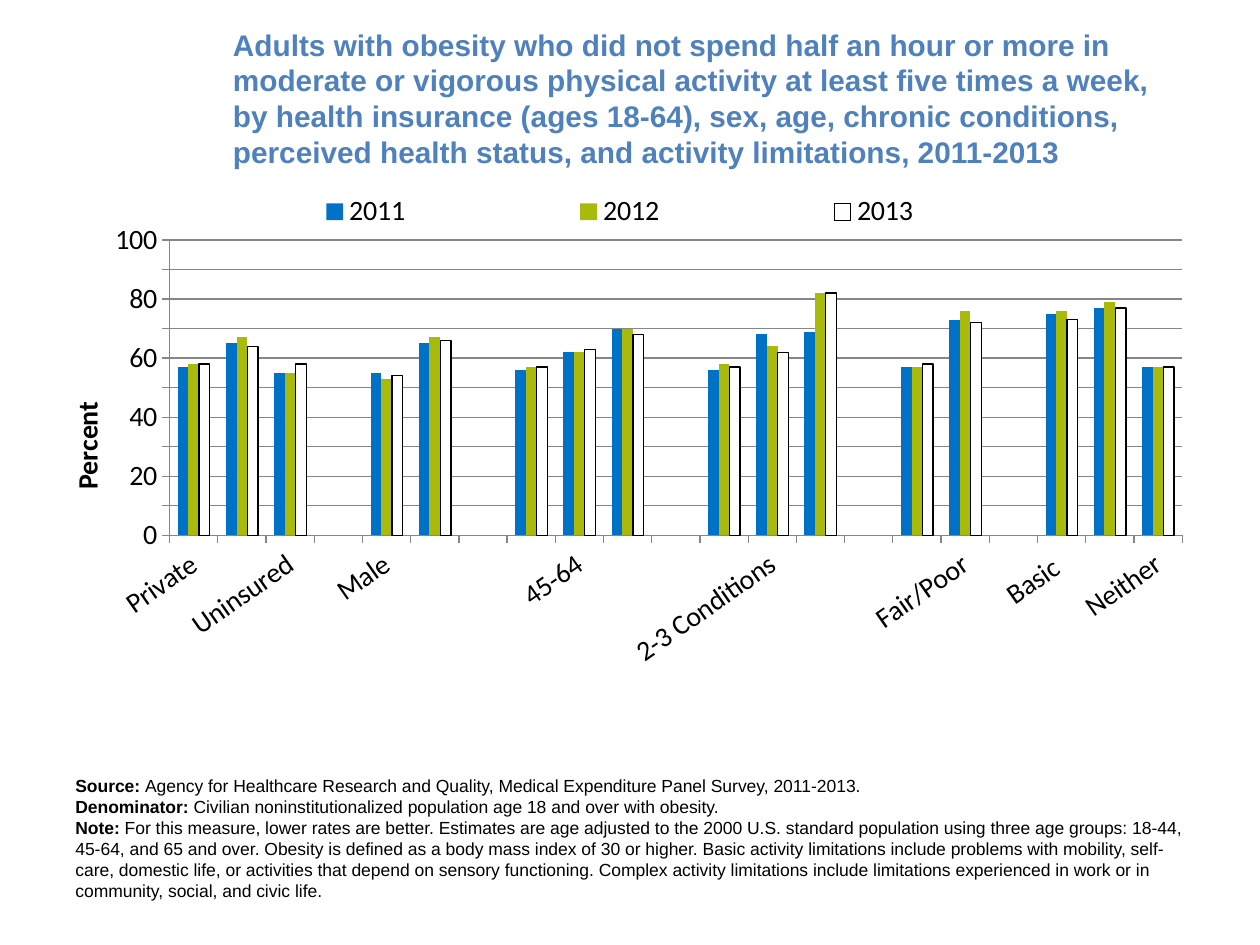
from typing import NamedTuple, Optional

from lxml import etree
from pptx import Presentation
from pptx import util as u
from pptx.chart.data import CategoryChartData
from pptx.dml.color import RGBColor
from pptx.enum import chart as charts, text
from pptx.oxml import parse_xml
from pptx.oxml.ns import nsdecls, qn

WIDTH, HEIGHT = 10, 7.5
COLORS = {"title": "4F81BD", "ink": "000000", "grid": "868686",
          "2011": "0072C6", "2012": "AABA0A", "2013": "FFFFFF"}


class Area(NamedTuple):
    """Left, top, width and height as shares of the slide or chart."""
    left: float
    top: float
    width: float
    height: float

    def on_slide(self) -> list:
        sides = (WIDTH, HEIGHT, WIDTH, HEIGHT)
        return [u.Inches(share * side) for share, side in zip(self, sides)]


class Words(NamedTuple):
    content: str
    bold: bool


class Group(NamedTuple):
    """Categories that stand together, with one row of values per year."""
    labels: list
    values: dict


TITLE_AREA = Area(0.175, 0.04, 0.775, 0.127)
CHART_AREA = Area(0.05, 0.2, 0.9, 0.613)
NOTES_AREA = Area(0.05, 0.813, 0.9, 0.148)
PLOT_AREA = Area(0.094, 0.088, 0.893, 0.51)
LEGEND_AREA = Area(0.086, 0.01, 0.81, 0.055)

TITLE = ("Adults with obesity who did not spend half an hour or more in moderate or "
         "vigorous physical activity at least five times a week, by health insurance "
         "(ages 18-64), sex, age, chronic conditions, perceived health status, and "
         "activity limitations, 2011-2013")
NOTES = {
    "Source: ": "Agency for Healthcare Research and Quality, Medical Expenditure Panel "
                "Survey, 2011-2013.",
    "Denominator: ": "Civilian noninstitutionalized population age 18 and over with obesity.",
    "Note: ": "For this measure, lower rates are better. Estimates are age adjusted to the "
              "2000 U.S. standard population using three age groups: 18-44, 45-64, and 65 "
              "and over. Obesity is defined as a body mass index of 30 or higher. Basic "
              "activity limitations include problems with mobility, self-care, domestic "
              "life, or activities that depend on sensory functioning. Complex activity "
              "limitations include limitations experienced in work or in community, social, "
              "and civic life.",
}
YEARS = ("2011", "2012", "2013")
GROUPS = [
    Group(["Private", "Public", "Uninsured"],
          {"2011": [57, 65, 55], "2012": [58, 67, 55], "2013": [58, 64, 58]}),
    Group(["Male", "Female"],
          {"2011": [55, 65], "2012": [53, 67], "2013": [54, 66]}),
    Group(["18-44", "45-64", "65+"],
          {"2011": [56, 62, 70], "2012": [57, 62, 70], "2013": [57, 63, 68]}),
    Group(["0-1 Conditions", "2-3 Conditions", "4+ Conditions"],
          {"2011": [56, 68, 69], "2012": [58, 64, 82], "2013": [57, 62, 82]}),
    Group(["Excellent/Very Good/Good", "Fair/Poor"],
          {"2011": [57, 73], "2012": [57, 76], "2013": [58, 72]}),
    Group(["Basic ", "Complex", "Neither"],
          {"2011": [75, 77, 57], "2012": [76, 79, 57], "2013": [73, 77, 57]}),
]


def color(name: str) -> RGBColor:
    return RGBColor.from_string(COLORS[name])


def style(font, size: float, name: str, ink: str, bold: Optional[bool] = None) -> None:
    font.size, font.name, font.bold = u.Pt(size), name, bold
    font.color.rgb = color(ink)


def add_text(page, area: Area, paragraphs: list, size: float, ink: str, anchor) -> None:
    frame = page.shapes.add_textbox(*area.on_slide()).text_frame
    frame.word_wrap = True
    frame.vertical_anchor = anchor
    for index, runs in enumerate(paragraphs):
        para = frame.add_paragraph() if index else frame.paragraphs[0]
        for words in runs:
            span = para.add_run()
            span.text = words.content
            style(span.font, size, "Arial", ink, words.bold)


def layout(area: Area, inner: bool = False) -> etree._Element:
    target = '<c:layoutTarget val="inner"/>' if inner else ""
    sizes = "".join(f'<c:{tag} val="{share}"/>' for tag, share in zip("xywh", area))
    return parse_xml(f'<c:layout {nsdecls("c")}><c:manualLayout>{target}'
                     '<c:xMode val="edge"/><c:yMode val="edge"/>'
                     f'{sizes}</c:manualLayout></c:layout>')


def joined(rows: list, gap) -> list:
    """Chain the groups with one empty slot between neighbours."""
    result = list(rows[0])
    for row in rows[1:]:
        result += [gap, *row]
    return result


def add_rates_chart(page) -> None:
    data = CategoryChartData(number_format="0")
    data.categories = joined([group.labels for group in GROUPS], "")
    for year in YEARS:
        data.add_series(year, joined([group.values[year] for group in GROUPS], None))
    chart = page.shapes.add_chart(charts.XL_CHART_TYPE.COLUMN_CLUSTERED,
                                  *CHART_AREA.on_slide(), data).chart
    style(chart.font, 10, "Arial", "ink")
    chart.has_title = False

    # Columns
    plot = chart.plots[0]
    plot.gap_width, plot.overlap, plot.vary_by_categories = 150, 0, False
    for series in plot.series:
        series.format.fill.solid()
        series.format.fill.fore_color.rgb = color(series.name)
        series.invert_if_negative = False
    outline = plot.series[-1].format.line
    outline.color.rgb, outline.width = color("ink"), u.Pt(0.75)

    # Axes
    for axis in (chart.category_axis, chart.value_axis):
        style(axis.tick_labels.font, 16, "Calibri", "ink")
        axis.major_tick_mark = charts.XL_TICK_MARK.OUTSIDE
        axis.format.line.color.rgb = color("grid")
    labels = chart.category_axis._element.find(qn("c:txPr")).find(qn("a:bodyPr"))
    labels.set("rot", str(-35 * 60000))
    scale = chart.value_axis
    scale.minimum_scale, scale.maximum_scale, scale.major_unit = 0, 100, 10
    scale.tick_labels.number_format = "0"
    scale.tick_labels.number_format_is_linked = False
    scale.has_major_gridlines = True
    scale.major_gridlines.format.line.color.rgb = color("grid")
    span = scale.axis_title.text_frame.paragraphs[0].add_run()
    span.text = "Percent"
    style(span.font, 16, "Calibri", "ink", True)

    # Legend and placement
    chart.has_legend = True
    legend = chart.legend
    legend.position = charts.XL_LEGEND_POSITION.TOP
    legend.include_in_layout = False
    style(legend.font, 16, "Calibri", "ink")
    plot_area = chart._chartSpace.chart.plotArea
    for holder in (plot_area, legend._element):
        for old in holder.findall(qn("c:layout")):
            holder.remove(old)
    plot_area.insert(0, layout(PLOT_AREA, inner=True))
    legend._element.find(qn("c:legendPos")).addnext(layout(LEGEND_AREA))


def main() -> None:
    deck = Presentation()
    deck.slide_width, deck.slide_height = u.Inches(WIDTH), u.Inches(HEIGHT)
    page = deck.slides.add_slide(deck.slide_layouts[6])
    add_text(page, TITLE_AREA, [[Words(TITLE, True)]], 17, "title",
             text.MSO_ANCHOR.MIDDLE)
    add_rates_chart(page)
    add_text(page, NOTES_AREA,
             [[Words(lead, True), Words(body, False)] for lead, body in NOTES.items()],
             10, "ink", text.MSO_ANCHOR.TOP)
    deck.save("out.pptx")


if __name__ == "__main__":
    main()
